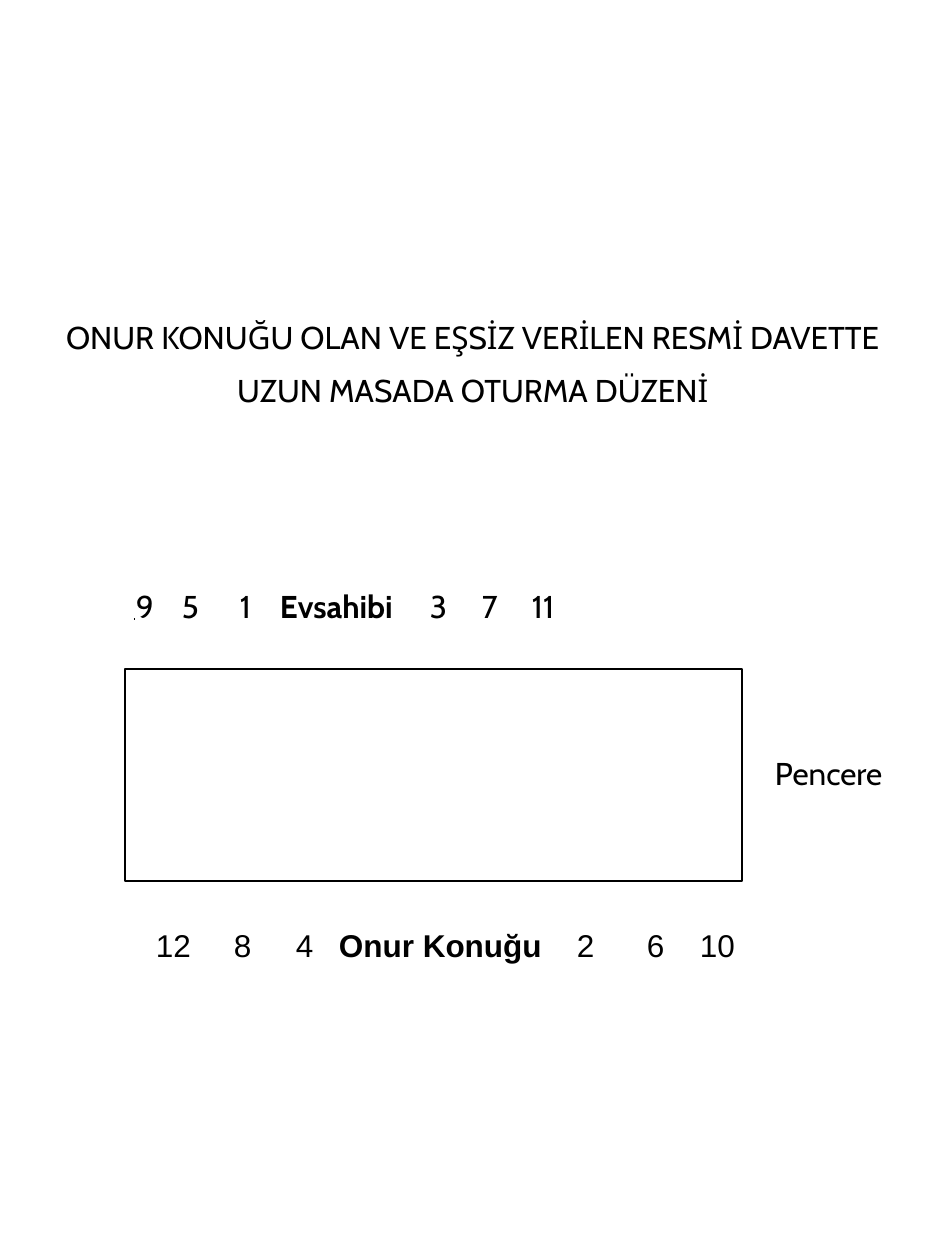
from dataclasses import dataclass

from lxml import etree
from pptx import Presentation
from pptx.dml.color import RGBColor
from pptx.enum.shapes import MSO_CONNECTOR, MSO_SHAPE
from pptx.enum.text import MSO_ANCHOR, PP_ALIGN
from pptx.oxml.ns import qn
from pptx.slide import Slide
from pptx.util import Emu, Pt

STRAIGHT = MSO_CONNECTOR.STRAIGHT
RECTANGLE = MSO_SHAPE.RECTANGLE
TOP, BOTTOM = MSO_ANCHOR.TOP, MSO_ANCHOR.BOTTOM
LEFT, CENTER = PP_ALIGN.LEFT, PP_ALIGN.CENTER
PX_PER_INCH = 126


@dataclass(frozen=True)
class Theme:
    ink: RGBColor = RGBColor(0, 0, 0)
    size: Pt = Pt(18)
    gap: Pt = Pt(8.5)
    body: str = "Cabin"
    guest: str = "Arial"
    table_line: Pt = Pt(0.75)
    mark_line: Pt = Pt(1)


@dataclass(frozen=True)
class Box:
    left: int
    top: int
    width: int
    height: int


@dataclass(frozen=True)
class Seat:
    label: str
    x: int
    bold: bool = False


@dataclass(frozen=True)
class SeatRow:
    box: Box
    seats: tuple[Seat, ...]
    font: str
    anchor: MSO_ANCHOR


THEME = Theme()

SEAT_ROWS = (
    SeatRow(
        Box(135, 882, 645, 88),
        (Seat("12", 156), Seat("8", 234), Seat("4", 296), Seat("Onur Konuğu", 339, True),
         Seat("2", 577), Seat("6", 647), Seat("10", 700)),
        THEME.guest, BOTTOM,
    ),
    SeatRow(
        Box(96, 581, 631, 88),
        (Seat("9", 136), Seat("5", 182), Seat("1", 240), Seat("Evsahibi", 280, True),
         Seat("3", 430), Seat("7", 482), Seat("11", 532)),
        THEME.body, TOP,
    ),
)


def px(length: int) -> Emu:
    return Emu(round(length * 914400 / PX_PER_INCH))


def place(box: Box) -> tuple[Emu, ...]:
    return px(box.left), px(box.top), px(box.width), px(box.height)


def add_text(slide: Slide, box: Box, paragraphs: list[list[tuple[str, bool]]], *,
             font: str = THEME.body, align: PP_ALIGN = LEFT, anchor: MSO_ANCHOR = TOP,
             inset: int = 13, tabs: tuple[int, ...] = ()) -> None:
    frame = slide.shapes.add_textbox(*place(box)).text_frame
    frame.word_wrap = True
    frame.vertical_anchor = anchor
    frame.margin_left = px(inset)
    for index, pieces in enumerate(paragraphs):
        paragraph = frame.paragraphs[0] if index == 0 else frame.add_paragraph()
        paragraph.alignment = align
        if index:
            paragraph.space_before = THEME.gap
        if tabs:
            stops = etree.SubElement(paragraph._p.get_or_add_pPr(), qn("a:tabLst"))
            for stop in tabs:
                etree.SubElement(stops, qn("a:tab"), pos=str(px(stop)), algn="l")
        for text, bold in pieces:
            run = paragraph.add_run()
            run.text = text
            run.font.name = font
            run.font.size = THEME.size
            run.font.bold = bold
            run.font.color.rgb = THEME.ink


def add_seat_row(slide: Slide, row: SeatRow) -> None:
    start = row.seats[0].x
    pieces = [("\t" * (index > 0) + seat.label, seat.bold)
              for index, seat in enumerate(row.seats)]
    add_text(slide, row.box, [pieces], font=row.font, anchor=row.anchor,
             inset=start - row.box.left,
             tabs=tuple(seat.x - start for seat in row.seats[1:]))


def add_dining_table(slide: Slide, box: Box) -> None:
    dining_table = slide.shapes.add_shape(RECTANGLE, *place(box))
    dining_table.shadow.inherit = False
    dining_table.fill.background()
    dining_table.line.color.rgb = THEME.ink
    dining_table.line.width = THEME.table_line


def add_mark(slide: Slide, x: int, y: int, length: int) -> None:
    mark = slide.shapes.add_connector(STRAIGHT, px(x), px(y), px(x + length), px(y))
    mark.line.color.rgb = THEME.ink
    mark.line.width = THEME.mark_line
    etree.SubElement(mark._element.spPr, qn("a:effectLst"))


def main() -> None:
    deck = Presentation()
    deck.slide_width, deck.slide_height = px(945), px(1260)
    slide = deck.slides.add_slide(deck.slide_layouts[6])
    add_mark(slide, 134, 619, 1)
    add_dining_table(slide, Box(125, 669, 617, 212))
    for row in SEAT_ROWS:
        add_seat_row(slide, row)
    add_text(slide, Box(762, 748, 183, 50), [[("Pencere", False)]])
    title = ("ONUR KONUĞU OLAN VE EŞSİZ VERİLEN RESMİ DAVETTE", "UZUN MASADA OTURMA DÜZENİ")
    add_text(slide, Box(0, 312, 945, 107), [[(line, False)] for line in title], align=CENTER)
    deck.save("out.pptx")


if __name__ == "__main__":
    main()
